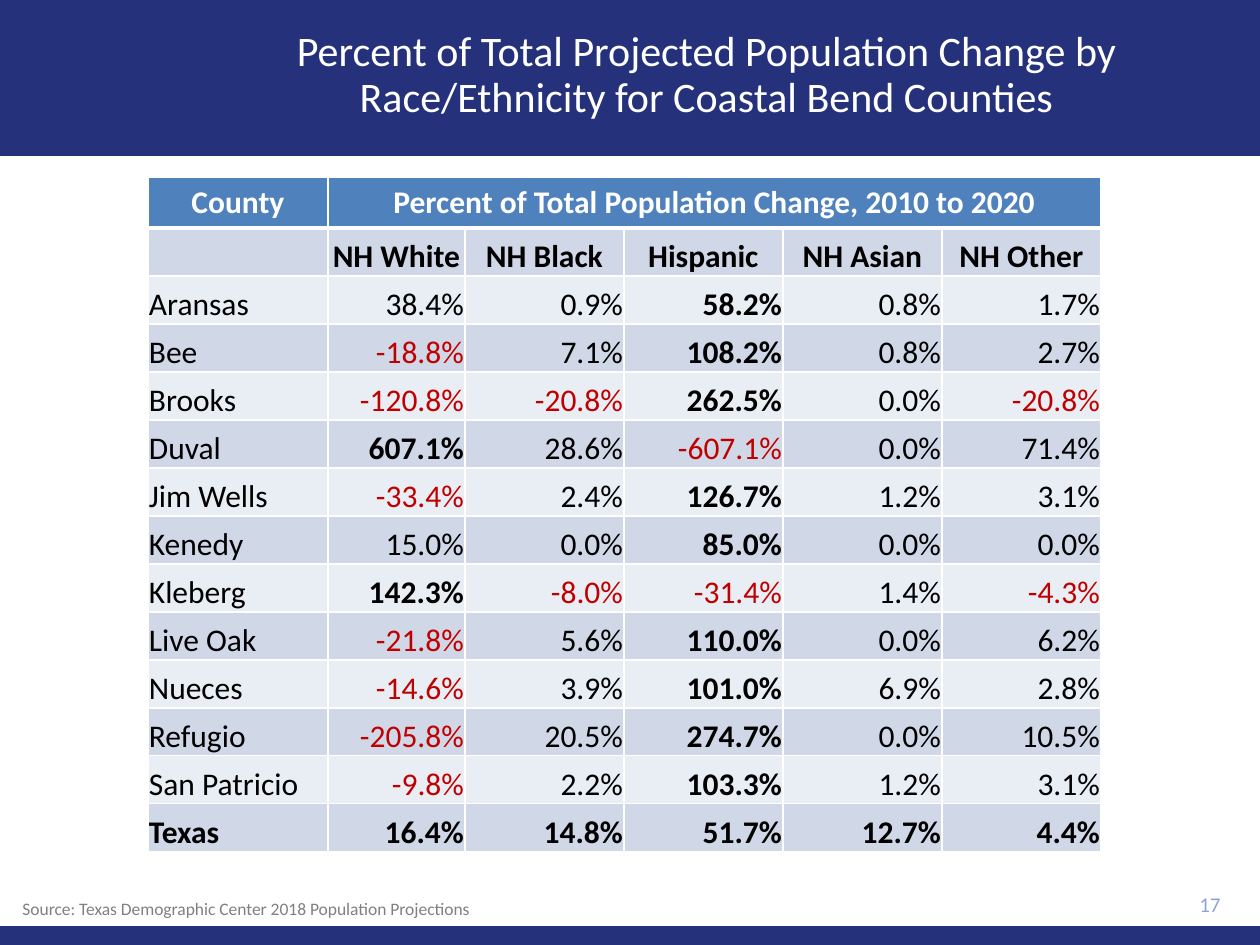
from lxml import etree
from pptx import Presentation
from pptx import util as u
from pptx.dml.color import RGBColor
from pptx.enum import shapes, text
from pptx.oxml import ns

EMU_PER_PX = 914400 / 126
FONT = "Calibri"
NAVY = RGBColor(0x25, 0x32, 0x7B)
WHITE = RGBColor(0xFF, 0xFF, 0xFF)
BLACK = RGBColor(0, 0, 0)
RED = RGBColor(0xC0, 0, 0)
GRAY = RGBColor(0x80, 0x80, 0x80)
PAGE_BLUE = RGBColor(0x8F, 0xA5, 0xD1)
HEAD_BLUE = RGBColor(0x4F, 0x81, 0xBD)
BANDS = [RGBColor(0xE9, 0xED, 0xF4), RGBColor(0xD0, 0xD8, 0xE8)]
LEFT, CENTER, RIGHT = text.PP_ALIGN.LEFT, text.PP_ALIGN.CENTER, text.PP_ALIGN.RIGHT
MIDDLE, BOTTOM = text.MSO_ANCHOR.MIDDLE, text.MSO_ANCHOR.BOTTOM

COL_WIDTHS = [180, 137, 159, 159, 159, 159]
ROW_HEIGHT = 48
GROUPS = ["NH White", "NH Black", "Hispanic", "NH Asian", "NH Other"]
COUNTIES = [
    ("Aransas", [38.4, 0.9, 58.2, 0.8, 1.7]),
    ("Bee", [-18.8, 7.1, 108.2, 0.8, 2.7]),
    ("Brooks", [-120.8, -20.8, 262.5, 0.0, -20.8]),
    ("Duval", [607.1, 28.6, -607.1, 0.0, 71.4]),
    ("Jim Wells", [-33.4, 2.4, 126.7, 1.2, 3.1]),
    ("Kenedy", [15.0, 0.0, 85.0, 0.0, 0.0]),
    ("Kleberg", [142.3, -8.0, -31.4, 1.4, -4.3]),
    ("Live Oak", [-21.8, 5.6, 110.0, 0.0, 6.2]),
    ("Nueces", [-14.6, 3.9, 101.0, 6.9, 2.8]),
    ("Refugio", [-205.8, 20.5, 274.7, 0.0, 10.5]),
    ("San Patricio", [-9.8, 2.2, 103.3, 1.2, 3.1]),
    ("Texas", [16.4, 14.8, 51.7, 12.7, 4.4]),
]


def px(n):
    return u.Emu(round(n * EMU_PER_PX))


def write(p, words, size, color, align=LEFT, bold=False):
    p.alignment = align
    r = p.add_run()
    r.text = words
    f = r.font
    f.name, f.size, f.bold = FONT, u.Pt(size), bold
    f.color.rgb = color


def add_bar(s, y, h):
    """Full-width band, placed behind everything else."""
    sp = s.shapes.add_shape(shapes.MSO_SHAPE.RECTANGLE, 0, px(y), px(1260), px(h))
    sp.shadow.inherit = False
    sp.fill.solid()
    sp.fill.fore_color.rgb = NAVY
    sp.line.fill.background()
    s.shapes._spTree.insert(2, sp._element)


def set_title(s, words):
    sp = s.shapes.title
    sp.left, sp.top, sp.width, sp.height = px(166), px(13), px(1081), px(126)
    tf = sp.text_frame
    tf.word_wrap = True
    tf.vertical_anchor = MIDDLE
    p = tf.paragraphs[0]
    p.line_spacing = 0.9
    write(p, words, 24, WHITE, CENTER)


def add_text(s, box, words, size, color, align=LEFT, anchor=text.MSO_ANCHOR.TOP):
    tf = s.shapes.add_textbox(*map(px, box)).text_frame
    tf.word_wrap = True
    tf.vertical_anchor = anchor
    write(tf.paragraphs[0], words, size, color, align)


def set_borders(cell, top=1, bottom=1):
    """White rules round a cell; widths in points."""
    tcPr = cell._tc.get_or_add_tcPr()
    for side, width in (("L", 1), ("R", 1), ("T", top), ("B", bottom)):
        ln = etree.SubElement(tcPr, ns.qn(f"a:ln{side}"), w=str(u.Pt(width)))
        fill = etree.SubElement(ln, ns.qn("a:solidFill"))
        etree.SubElement(fill, ns.qn("a:srgbClr"), val=str(WHITE))


def fill_cell(cell, words, color=BLACK, align=LEFT, bold=False):
    if words:
        write(cell.text_frame.paragraphs[0], words, 18, color, align, bold)
    else:
        cell.text_frame.paragraphs[0].font.size = u.Pt(18)


def add_county_table(s):
    n_rows, n_cols = len(COUNTIES) + 2, len(COL_WIDTHS)
    frame = s.shapes.add_table(n_rows, n_cols, px(148), px(177),
                               px(sum(COL_WIDTHS)), px(ROW_HEIGHT * n_rows))
    table = frame.table
    for col, width in zip(table.columns, COL_WIDTHS):
        col.width = px(width)
    for i, row in enumerate(table.rows):
        row.height = px(ROW_HEIGHT)
        for cell in row.cells:
            set_borders(cell, 3 if i == 1 else 1, 3 if i == 0 else 1)
            cell.fill.solid()
            cell.fill.fore_color.rgb = BANDS[i % 2] if i else HEAD_BLUE
            cell.vertical_anchor = BOTTOM if i else MIDDLE
            if i:
                cell.margin_left = cell.margin_right = cell.margin_top = px(1)
                cell.margin_bottom = 0

    table.cell(0, 1).merge(table.cell(0, n_cols - 1))
    fill_cell(table.cell(0, 0), "County", WHITE, CENTER, True)
    fill_cell(table.cell(0, 1), "Percent of Total Population Change, 2010 to 2020",
              WHITE, CENTER, True)
    for j, name in enumerate(["", *GROUPS]):
        fill_cell(table.cell(1, j), name, BLACK, CENTER, True)
    for i, (county, shares) in enumerate(COUNTIES, 2):
        is_state = county == "Texas"
        fill_cell(table.cell(i, 0), county, bold=is_state)
        for j, share in enumerate(shares, 1):
            fill_cell(table.cell(i, j), f"{share:.1f}%", RED if share < 0 else BLACK,
                      RIGHT, is_state or share == max(shares))


def main():
    prs = Presentation()
    prs.slide_width, prs.slide_height = px(1260), px(945)
    s = prs.slides.add_slide(prs.slide_layouts[5])
    add_bar(s, 926, 19)
    add_bar(s, 0, 156)
    set_title(s, "Percent of Total Projected Population Change by "
                 "Race/Ethnicity for Coastal Bend Counties")
    add_county_table(s)
    add_text(s, (1121, 883, 112, 43), "17", 12, PAGE_BLUE, RIGHT, MIDDLE)
    add_text(s, (10, 892, 1217, 34),
             "Source: Texas Demographic Center 2018 Population Projections", 10, GRAY)
    prs.save("out.pptx")


if __name__ == "__main__":
    main()
